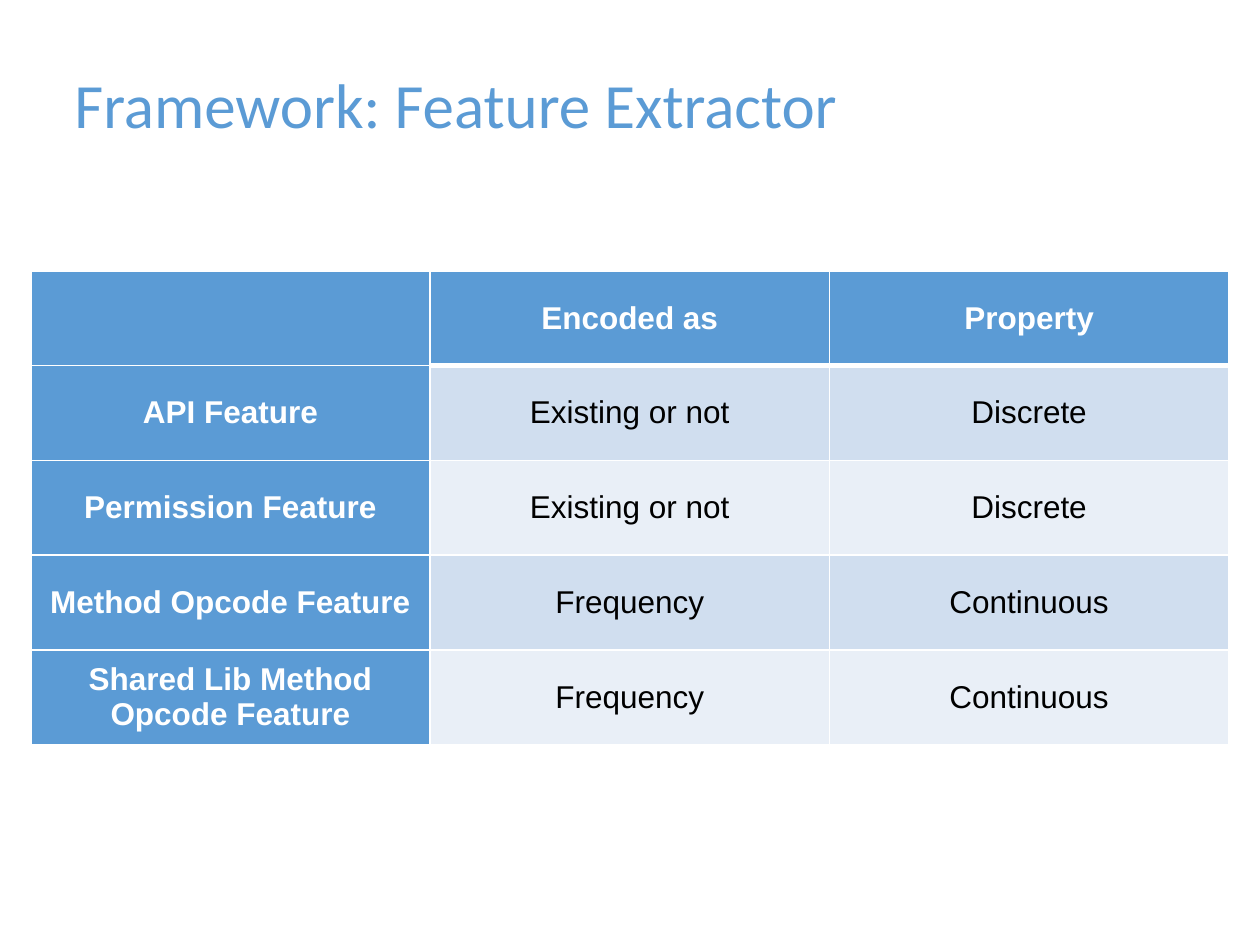
from lxml import etree
from pptx import Presentation
from pptx.dml.color import RGBColor
from pptx.enum.text import MSO_ANCHOR, PP_ALIGN
from pptx.oxml.ns import qn
from pptx.util import Cm, Pt

MIDDLE = MSO_ANCHOR.MIDDLE
LEFT, CENTER = PP_ALIGN.LEFT, PP_ALIGN.CENTER
BLUE = RGBColor(0x5B, 0x9B, 0xD5)
BAND = RGBColor(0xD0, 0xDE, 0xEF)
PALE = RGBColor(0xE9, 0xEF, 0xF7)
WHITE = RGBColor(0xFF, 0xFF, 0xFF)
BLACK = RGBColor(0, 0, 0)

ROWS = [
    ("", "Encoded as", "Property"),
    ("API Feature", "Existing or not", "Discrete"),
    ("Permission Feature", "Existing or not", "Discrete"),
    ("Method Opcode Feature", "Frequency", "Continuous"),
    ("Shared Lib Method Opcode Feature", "Frequency", "Continuous"),
]


def write(frame, text, font="Arial", size=18, color=BLACK, bold=False, align=CENTER):
    para = frame.paragraphs[0]
    para.alignment = align
    run = para.add_run()
    run.text = text
    run.font.name = font
    run.font.size = Pt(size)
    run.font.bold = bold
    run.font.color.rgb = color


def edge(cell, side, width):
    """Draw a white border on one side of a cell."""
    line = etree.SubElement(cell._tc.get_or_add_tcPr(), qn(f"a:ln{side}"), w=str(Pt(width)))
    fill = etree.SubElement(line, qn("a:solidFill"))
    etree.SubElement(fill, qn("a:srgbClr"), val=str(WHITE))


deck = Presentation()
deck.slide_width, deck.slide_height = Cm(25.4), Cm(19.05)
slide = deck.slides.add_slide(deck.slide_layouts[5])

title = slide.shapes.title
title.left, title.top, title.width, title.height = Cm(1.4), Cm(1.19), Cm(22.6), Cm(1.8)
frame = title.text_frame
frame.margin_left = frame.margin_right = frame.margin_top = frame.margin_bottom = Cm(0.1)
frame.vertical_anchor = MIDDLE
write(frame, "Framework: Feature Extractor", font="Calibri", size=36, color=BLUE, align=LEFT)

grid = slide.shapes.add_table(
    len(ROWS), len(ROWS[0]), Cm(0.62), Cm(5.46), Cm(24.15), Cm(9.55)).table

for r, row in enumerate(ROWS):
    for c, text in enumerate(row):
        cell = grid.cell(r, c)
        head = r == 0 or c == 0
        for side in "LRTB":
            thick = c > 0 and (r, side) in ((0, "B"), (1, "T"))
            edge(cell, side, 3 if thick else 1)
        cell.fill.solid()
        cell.fill.fore_color.rgb = BLUE if head else BAND if r % 2 else PALE
        cell.margin_left = cell.margin_right = cell.margin_top = cell.margin_bottom = 0
        cell.vertical_anchor = MIDDLE
        if text:
            write(cell.text_frame, text, color=WHITE if head else BLACK, bold=head)

deck.save("out.pptx")
